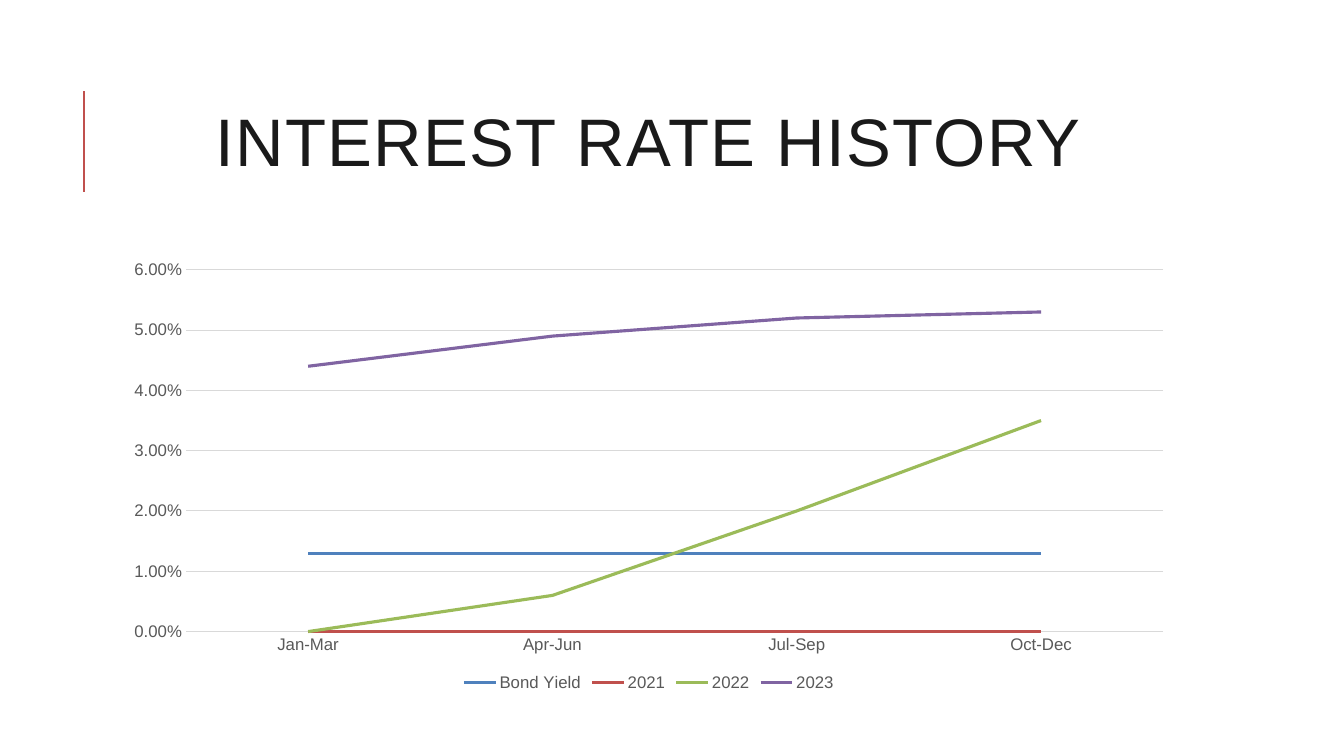
import dataclasses

import pptx
import pptx.chart.data
import pptx.dml.color
import pptx.enum.chart
import pptx.enum.shapes
import pptx.enum.text
import pptx.oxml
import pptx.oxml.ns
import pptx.util

Inches = pptx.util.Inches
Pt = pptx.util.Pt
FONT = "Arial"
GREY = "595959"
RULE = "D9D9D9"
LEFT, WIDTH = Inches(1.12), Inches(10.63)


@dataclasses.dataclass
class Series:
    name: str
    rates: tuple[float, ...]
    color: str


QUARTERS = ("Jan-Mar", "Apr-Jun", "Jul-Sep", "Oct-Dec")
SERIES = (
    Series("Bond Yield", (0.013,) * 4, "4F81BD"),
    Series("2021", (0,) * 4, "C0504D"),
    Series("2022", (0, 0.006, 0.02, 0.035), "9BBB59"),
    Series("2023", (0.044, 0.049, 0.052, 0.053), "8064A2"),
)


def rgb(color: str) -> pptx.dml.color.RGBColor:
    return pptx.dml.color.RGBColor.from_string(color)


def set_font(font, size: float, color: str) -> None:
    font.name = FONT
    font.size = Pt(size)
    font.color.rgb = rgb(color)


def set_line(line, color: str, width: float) -> None:
    line.color.rgb = rgb(color)
    line.width = Pt(width)


def add_accent(slide) -> None:
    x = Inches(0.83)
    accent = slide.shapes.add_connector(
        pptx.enum.shapes.MSO_CONNECTOR.STRAIGHT, x, Inches(1.9), x, Inches(0.9))
    set_line(accent.line, "C0504D", 1.5)
    accent._element.spPr.append(pptx.oxml.parse_xml(
        f"<a:effectLst {pptx.oxml.ns.nsdecls('a')}/>"))


def fill_title(slide) -> None:
    title = slide.shapes.title
    title.left, title.top = LEFT, Inches(0.64)
    title.width, title.height = WIDTH, Inches(1.64)
    frame = title.text_frame
    frame.word_wrap = True
    frame.auto_size = pptx.enum.text.MSO_AUTO_SIZE.NONE
    frame.vertical_anchor = pptx.enum.text.MSO_ANCHOR.MIDDLE
    para = frame.paragraphs[0]
    para.alignment = pptx.enum.text.PP_ALIGN.CENTER
    para.line_spacing = 0.8
    run = para.add_run()
    run.text = "INTEREST RATE HISTORY"
    set_font(run.font, 48, "1A1A1A")
    run._r.get_or_add_rPr().set("spc", "100")


def style_axes(chart) -> None:
    quarters, rates = chart.category_axis, chart.value_axis
    for axis in (quarters, rates):
        axis.major_tick_mark = pptx.enum.chart.XL_TICK_MARK.NONE
        axis.minor_tick_mark = pptx.enum.chart.XL_TICK_MARK.NONE
        set_font(axis.tick_labels.font, 12, GREY)
    set_line(quarters.format.line, RULE, 0.75)
    rates.format.line.fill.background()
    rates.has_major_gridlines = True
    set_line(rates.major_gridlines.format.line, RULE, 0.75)
    rates.minimum_scale, rates.maximum_scale = 0, 0.06
    rates.major_unit = 0.01
    rates.tick_labels.number_format = "0.00%"
    rates.tick_labels.number_format_is_linked = False


def add_rates(slide) -> None:
    data = pptx.chart.data.CategoryChartData(number_format="0.00%")
    data.categories = QUARTERS
    for series in SERIES:
        data.add_series(series.name, series.rates)
    chart = slide.shapes.add_chart(
        pptx.enum.chart.XL_CHART_TYPE.LINE,
        LEFT, Inches(2.5), WIDTH, Inches(4.4), data).chart
    set_font(chart.font, 10, "000000")
    chart.has_title = False
    chart.has_legend = True
    chart.legend.position = pptx.enum.chart.XL_LEGEND_POSITION.BOTTOM
    chart.legend.include_in_layout = False
    set_font(chart.legend.font, 12, GREY)
    style_axes(chart)
    plot = chart.plots[0]
    plot.vary_by_categories = False
    for series, line in zip(SERIES, plot.series):
        line.smooth = False
        set_line(line.format.line, series.color, 2.25)


def main() -> None:
    deck = pptx.Presentation()
    deck.slide_width, deck.slide_height = Inches(13.33), Inches(7.5)
    slide = deck.slides.add_slide(deck.slide_layouts.get_by_name("Title Only"))
    add_accent(slide)
    fill_title(slide)
    add_rates(slide)
    deck.save("out.pptx")


if __name__ == "__main__":
    main()
